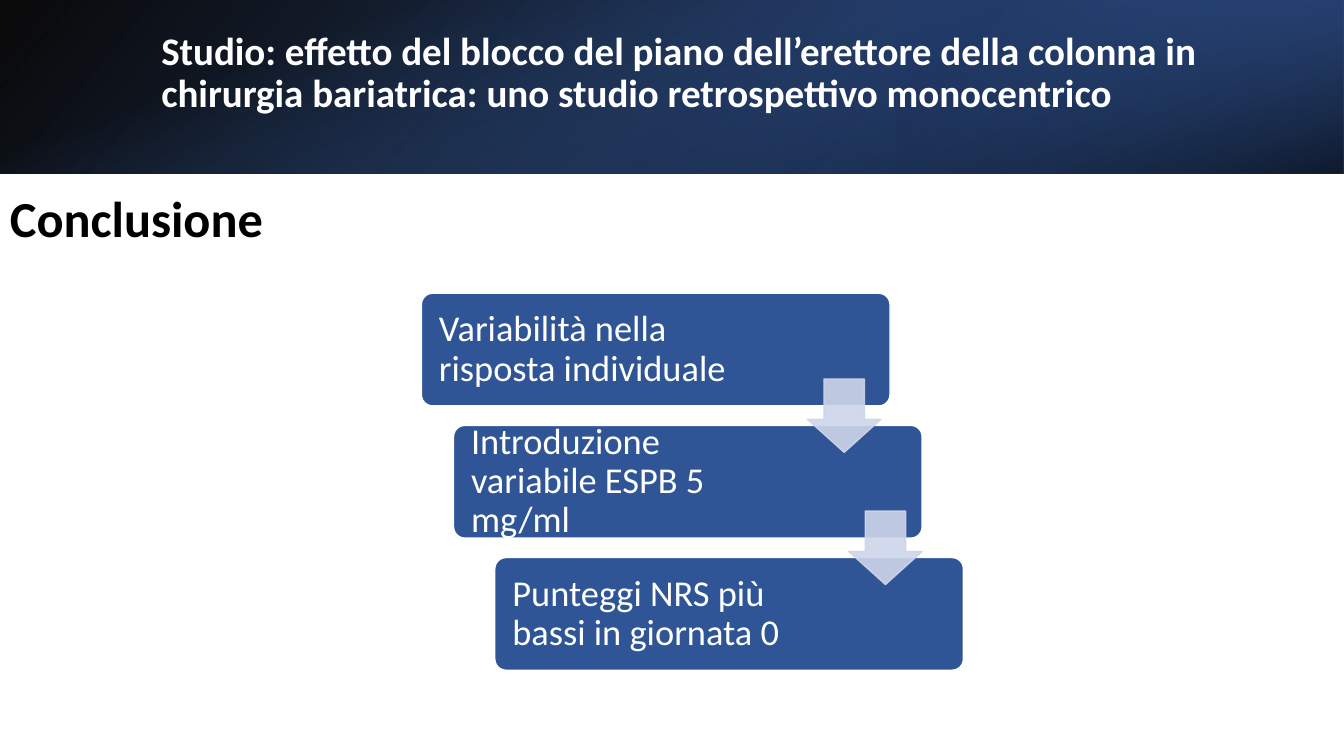
from pptx import Presentation
from pptx.dml.color import RGBColor
from pptx.enum.shapes import MSO_SHAPE as Preset
from pptx.enum.text import MSO_ANCHOR as Anchor, MSO_AUTO_SIZE as AutoSize, PP_ALIGN as Align
from pptx.oxml import parse_xml
from pptx.oxml.ns import nsdecls, qn
from pptx.util import Cm, Pt

COLORS = {
    "white": "FFFFFF",
    "black": "000000",
    "navy": "203864",
    "blue": "2F5597",
    "accent": "4472C4",
    "pale": "CFD5EA",
}


def rgb(name):
    return RGBColor.from_string(COLORS[name])


def set_font(paragraph, size, color, bold=False):
    paragraph.alignment = Align.LEFT
    paragraph.font.name = "Calibri"
    paragraph.font.size = Pt(size)
    paragraph.font.bold = bold
    paragraph.font.color.rgb = rgb(color)


presentation = Presentation()
presentation.slide_width = Cm(33.87)
presentation.slide_height = Cm(19.05)
slide = presentation.slides.add_slide(presentation.slide_layouts[5])
shapes = slide.shapes

banner_layers = [
    ((0, 0, 33.87, 4.37), 0, True, 140, [(0, "black", 96), (100, "blue", 100)]),
    ((22.58, 0, 11.29, 4.37), 180, True, 320, [(19, "navy", 68), (100, "accent", 79)]),
    ((14.75, -14.75, 4.37, 33.87), 90, False, 340, [(23, "accent", 0), (99, "black", 74)]),
]
for box, rotation, flipped, angle, stops in banner_layers:
    banner = shapes.add_shape(Preset.RECTANGLE, *[Cm(length) for length in box])
    banner.shadow.inherit = False
    banner.rotation = rotation
    banner.line.fill.background()
    banner.fill.background()
    properties = banner.element.spPr
    if flipped:
        properties.find(qn("a:xfrm")).set("flipH", "1")
    stop_xml = "".join(
        f'<a:gs pos="{position * 1000}"><a:srgbClr val="{COLORS[color]}">'
        f'<a:alpha val="{opacity * 1000}"/></a:srgbClr></a:gs>'
        for position, color, opacity in stops
    )
    gradient = parse_xml(
        f'<a:gradFill {nsdecls("a")} rotWithShape="1"><a:gsLst>{stop_xml}</a:gsLst>'
        f'<a:lin ang="{angle * 60000}" scaled="0"/></a:gradFill>'
    )
    properties.replace(properties.find(qn("a:noFill")), gradient)

study_title = shapes.title
study_title.left, study_title.top = Cm(3.81), Cm(0.64)
study_title.width, study_title.height = Cm(27.89), Cm(2.44)
study_title.text = (
    "Studio: effetto del blocco del piano dell’erettore della colonna in "
    "chirurgia bariatrica: uno studio retrospettivo monocentrico"
)
study_title.text_frame.auto_size = AutoSize.NONE
study_title.text_frame.vertical_anchor = Anchor.MIDDLE
study_title.text_frame.paragraphs[0].line_spacing = 0.9
set_font(study_title.text_frame.paragraphs[0], 27.9, "white", True)
study_title.element.getparent().append(study_title.element)

heading = shapes.add_textbox(Cm(0), Cm(4.6), Cm(16.15), Cm(1.8)).text_frame
heading.word_wrap = True
heading.text = "Conclusione"
set_font(heading.paragraphs[0], 36, "black", True)

steps = [
    (10.62, "Variabilità nella risposta individuale"),
    (11.43, "Introduzione variabile ESPB 5 mg/ml"),
    (12.47, "Punteggi NRS più bassi in giornata 0"),
]
first_top, step_pitch = 7.39, 3.33
for index, (left, wording) in enumerate(steps):
    top = first_top + index * step_pitch
    step = shapes.add_shape(Preset.ROUNDED_RECTANGLE, Cm(left), Cm(top), Cm(11.81), Cm(2.84))
    step.adjustments[0] = 0.1
    step.shadow.inherit = False
    step.fill.solid()
    step.fill.fore_color.rgb = rgb("blue")
    step.line.color.rgb = rgb("white")
    step.line.width = Pt(1)
    frame = step.text_frame
    frame.word_wrap = True
    frame.vertical_anchor = Anchor.MIDDLE
    frame.margin_left, frame.margin_right = Cm(0.36), Cm(3.27)
    frame.text = wording
    frame.paragraphs[0].line_spacing = 0.9
    set_font(frame.paragraphs[0], 26, "white")

for index, (left, wording) in enumerate(steps[1:], 1):
    top = first_top + index * step_pitch - 1.17
    arrow = shapes.add_shape(Preset.DOWN_ARROW, Cm(left + 8.92), Cm(top), Cm(1.85), Cm(1.85))
    arrow.adjustments[0], arrow.adjustments[1] = 0.55, 0.45
    arrow.shadow.inherit = False
    arrow.fill.solid()
    arrow.fill.fore_color.rgb = rgb("pale")
    arrow.line.color.rgb = rgb("pale")
    arrow.line.width = Pt(1)
    for color in arrow.element.spPr.iter(qn("a:srgbClr")):
        color.append(parse_xml(f'<a:alpha {nsdecls("a")} val="90000"/>'))

presentation.save("out.pptx")
